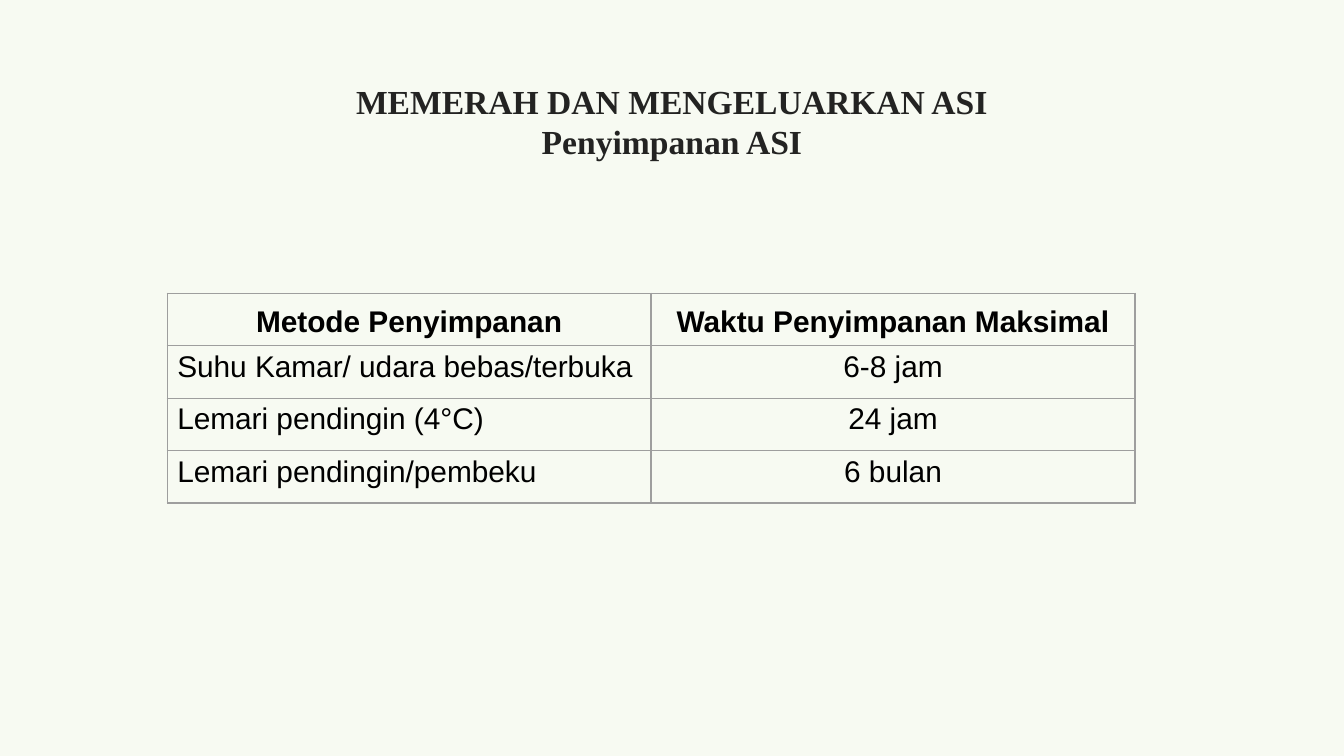
from lxml.etree import SubElement
from pptx import Presentation
from pptx.dml.color import RGBColor
from pptx.enum.text import MSO_ANCHOR as Anchor, MSO_AUTO_SIZE as AutoSize, PP_ALIGN as Align
from pptx.oxml.ns import qn
from pptx.util import Cm, Pt

TITLE = "MEMERAH DAN MENGELUARKAN ASI\vPenyimpanan ASI"
STORAGE = [
    ("Metode Penyimpanan", "Waktu Penyimpanan Maksimal"),
    ("Suhu Kamar/ udara bebas/terbuka", "6-8 jam"),
    ("Lemari pendingin (4°C)", "24 jam"),
    ("Lemari pendingin/pembeku", "6 bulan"),
]
TITLE_FONT = {"name": "Times New Roman", "size": Pt(18), "bold": True}
TABLE_FONT = {"name": "Arial", "size": Pt(16)}
CELL_FORMAT = {"margin_left": Cm(0.19), "margin_right": Cm(0.19),
               "margin_top": 0, "margin_bottom": 0}
BORDER = "9E9E9E"


def apply(target, values):
    for key, value in values.items():
        setattr(target, key, value)


def paint(color_format, hex_color):
    color_format.rgb = RGBColor.from_string(hex_color)


def format_text(paragraph, font, hex_color, **layout):
    apply(paragraph, layout)
    for run in paragraph.runs:
        apply(run.font, font)
        paint(run.font.color, hex_color)


def draw_borders(cell):
    properties = cell._tc.get_or_add_tcPr()
    for side in ("a:lnL", "a:lnR", "a:lnT", "a:lnB"):
        line = SubElement(properties, qn(side), w=str(Pt(0.75)))
        fill = SubElement(line, qn("a:solidFill"))
        SubElement(fill, qn("a:srgbClr"), val=BORDER)


def add_title(slide):
    title = slide.shapes.title
    apply(title, {"left": Cm(2), "top": Cm(1.5), "width": Cm(21.4), "height": Cm(1.58)})
    frame = title.text_frame
    frame.text = TITLE
    apply(frame, {"vertical_anchor": Anchor.MIDDLE, "auto_size": AutoSize.NONE,
                  "word_wrap": True})
    apply(frame, {f"margin_{side}": Cm(0.25) for side in ("left", "right", "top", "bottom")})
    format_text(frame.paragraphs[0], TITLE_FONT, "232322", alignment=Align.CENTER)


def fill_cell(cell, text, is_header, is_method):
    cell.text = text
    apply(cell, CELL_FORMAT)
    cell.vertical_anchor = Anchor.MIDDLE if is_header else Anchor.TOP
    alignment = Align.JUSTIFY if is_method and not is_header else Align.CENTER
    format_text(cell.text_frame.paragraphs[0], {**TABLE_FONT, "bold": is_header},
                "000000", alignment=alignment, line_spacing=1.15)
    draw_borders(cell)
    cell.fill.background()


def add_storage_table(slide):
    storage = slide.shapes.add_table(len(STORAGE), len(STORAGE[0]), Cm(3.16), Cm(5.54),
                                     Cm(18.29), Cm(3.96)).table
    apply(storage, {"first_row": False, "horz_banding": False})
    for row, texts in enumerate(STORAGE):
        for column, text in enumerate(texts):
            fill_cell(storage.cell(row, column), text, row == 0, column == 0)


def main():
    presentation = Presentation()
    apply(presentation, {"slide_width": Cm(25.4), "slide_height": Cm(14.28)})
    slide = presentation.slides.add_slide(presentation.slide_layouts[5])
    background = slide.background.fill
    background.solid()
    paint(background.fore_color, "F7FAF2")
    add_title(slide)
    add_storage_table(slide)
    presentation.save("out.pptx")


if __name__ == "__main__":
    main()
